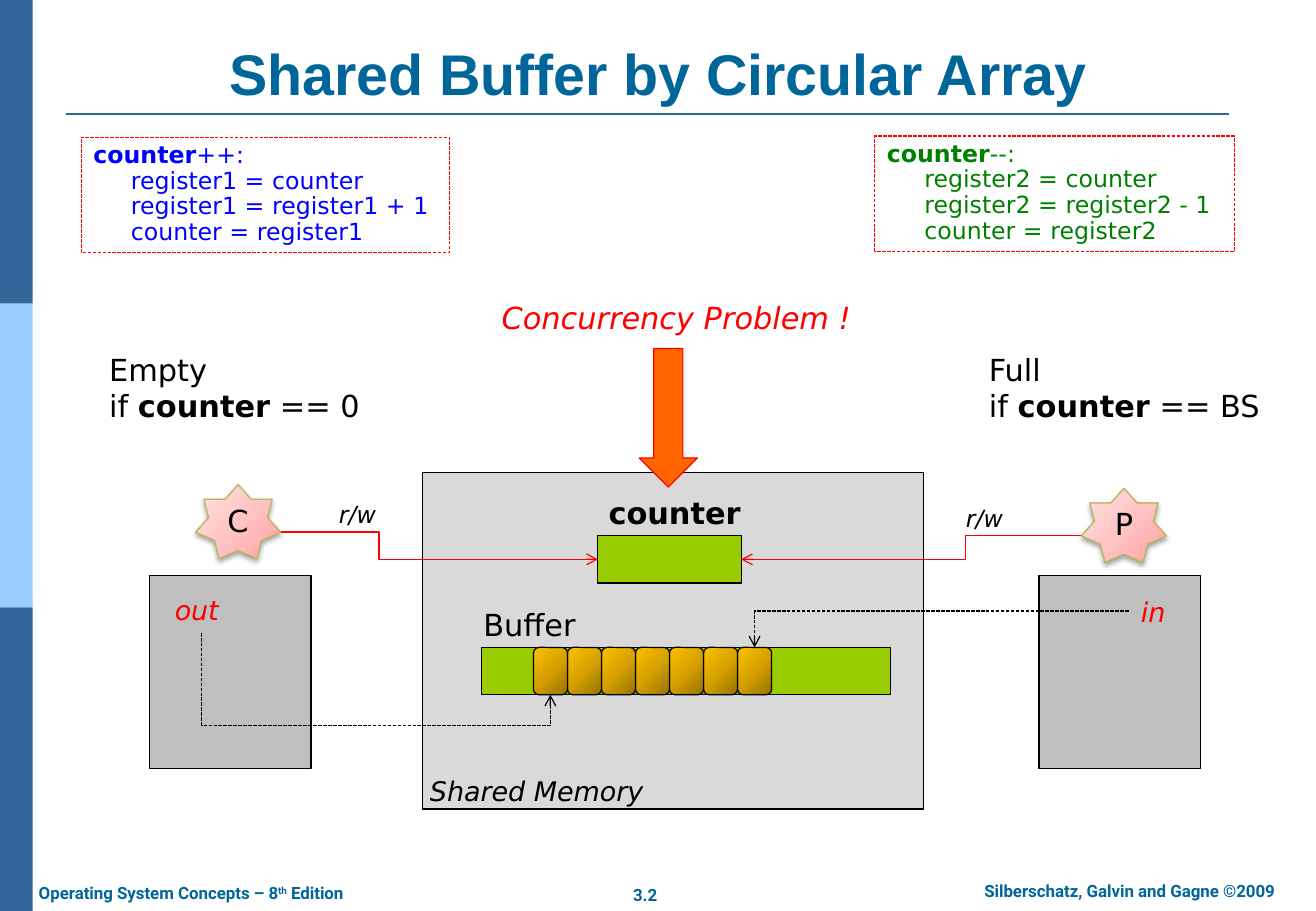
"""Build the slide on a shared buffer held in a circular array."""
from dataclasses import dataclass
from typing import Optional

from pptx import Presentation, oxml, util as u
from pptx.dml.color import RGBColor
from pptx.enum import dml, shapes, text
from pptx.oxml.ns import nsdecls, qn

S = shapes.MSO_SHAPE
A = text.PP_ALIGN


@dataclass(frozen=True)
class Theme:
    """Colours, fonts and type sizes."""
    title: str = "006699"
    navy: str = "336699"
    sky: str = "99CCFF"
    black: str = "000000"
    red: str = "FF0000"
    blue: str = "0000FF"
    green: str = "008000"
    lime: str = "99CC00"
    orange: str = "FF6600"
    memory: str = "D9D9D9"
    process: str = "BFBFBF"
    star_line: str = "B7B758"
    star: tuple = ("FFA0A0", "FFC5C5", "FFE3E3")
    slot: tuple = ("977200", "D7A200", "FFC000")
    body_font: str = "DejaVu Sans"
    title_font: str = "Arial"
    footer_font: str = "Roboto"
    title_size: int = 34
    large: int = 18
    medium: int = 16
    small: int = 14
    footer: int = 10


T = Theme()


@dataclass(frozen=True)
class Run:
    """A piece of text with its emphasis."""
    words: str
    bold: bool = False
    italic: bool = False
    raised: bool = False


@dataclass(frozen=True)
class Label:
    """A text box: place, paragraphs of runs, and format."""
    at: tuple
    paragraphs: tuple
    size: int = T.large
    color: str = T.black
    font: str = T.body_font
    align: A = A.LEFT
    wrap: bool = False
    spacing: float = 1.0
    border: Optional[str] = None


@dataclass(frozen=True)
class Block:
    """A preset shape: place, kind, fill and outline."""
    at: tuple
    fill: object
    line: Optional[str] = T.black
    kind: S = S.RECTANGLE


@dataclass(frozen=True)
class Elbow:
    """An elbow arrow: ends, bend and line."""
    begin: tuple
    end: tuple
    bend: Optional[float]
    color: str = T.black
    dashed: bool = True
    upright: bool = False
    side: Optional[int] = None


def write(p, runs: tuple, size: int, color: str, font: str) -> None:
    """Add formatted runs to a paragraph."""
    for run in runs:
        r = p.add_run()
        r.text = run.words
        r.font.size, r.font.name = u.Pt(size), font
        r.font.bold, r.font.italic = run.bold, run.italic
        r.font.color.rgb = RGBColor.from_string(color)
        if run.raised:
            r._r.get_or_add_rPr().set("baseline", "30000")


def outline(line, color: str, width: float = 0.75, dashed: bool = False) -> None:
    """Format a line."""
    line.color.rgb = RGBColor.from_string(color)
    line.width = u.Pt(width)
    if dashed:
        line.dash_style = dml.MSO_LINE.SQUARE_DOT


def draw_label(s, label: Label) -> None:
    """Draw a text box."""
    sp = s.shapes.add_textbox(*map(u.Inches, label.at))
    tf = sp.text_frame
    tf.word_wrap = label.wrap
    tf.auto_size = text.MSO_AUTO_SIZE.SHAPE_TO_FIT_TEXT
    if label.border:
        outline(sp.line, label.border, dashed=True)
    for i, runs in enumerate(label.paragraphs):
        p = tf.add_paragraph() if i else tf.paragraphs[0]
        p.alignment, p.line_spacing = label.align, label.spacing
        write(p, runs, label.size, label.color, label.font)


def draw_block(s, block: Block):
    """Draw a preset shape with a plain or gradient fill."""
    sp = s.shapes.add_shape(block.kind, *map(u.Inches, block.at))
    sp.shadow.inherit = False
    if isinstance(block.fill, tuple):
        sp.fill.background()
        stops = "".join(f'<a:gs pos="{i * 50000}"><a:srgbClr val="{c}"/></a:gs>'
                        for i, c in enumerate(block.fill))
        old = sp._element.spPr.find(qn("a:noFill"))
        old.getparent().replace(old, oxml.parse_xml(
            f'<a:gradFill {nsdecls("a")}><a:gsLst>{stops}</a:gsLst>'
            '<a:lin ang="13500000" scaled="0"/></a:gradFill>'))
    else:
        sp.fill.solid()
        sp.fill.fore_color.rgb = RGBColor.from_string(block.fill)
    if block.line:
        outline(sp.line, block.line)
    else:
        sp.line.fill.background()
    return sp


def draw_star(s, letter: str, left: float, top: float) -> None:
    """Draw a lettered star with a soft shadow."""
    sp = draw_block(s, Block((left, top, 0.7, 0.61), T.star, T.star_line, S.STAR_7_POINT))
    sp._element.spPr.find(qn("a:effectLst")).append(oxml.parse_xml(
        f'<a:outerShdw {nsdecls("a")} blurRad="{u.Pt(3.1)}" dist="{u.Pt(1.8)}" dir="5400000">'
        '<a:srgbClr val="000000"><a:alpha val="35000"/></a:srgbClr></a:outerShdw>'))
    tf = sp.text_frame
    tf.word_wrap = False
    tf.margin_left = tf.margin_right = u.Inches(0.07)
    tf.margin_top = tf.margin_bottom = u.Inches(0.04)
    tf.paragraphs[0].alignment = A.CENTER
    write(tf.paragraphs[0], (Run(letter),), T.large, T.black, T.body_font)


def draw_line(s, kind, begin: tuple, end: tuple):
    """Add a connector without a shadow."""
    sp = s.shapes.add_connector(kind, *map(u.Inches, begin + end))
    sp._element.spPr.append(oxml.parse_xml(f'<a:effectLst {nsdecls("a")}/>'))
    return sp


def draw_elbow(s, elbow: Elbow, target) -> None:
    """Draw an elbow arrow, turned a quarter when it sets out upright."""
    begin, end = elbow.begin, elbow.end
    if elbow.upright:
        cx, cy = (begin[0] + end[0]) / 2, (begin[1] + end[1]) / 2
        begin, end = ((cx - y + cy, cy + x - cx) for x, y in (begin, end))
    sp = draw_line(s, shapes.MSO_CONNECTOR.ELBOW, begin, end)
    spPr = sp._element.spPr
    if elbow.upright:
        spPr.find(qn("a:xfrm")).set("rot", "16200000")
    geom = spPr.find(qn("a:prstGeom"))
    if elbow.bend is None:
        geom.set("prst", "bentConnector2")
    else:
        geom.find(qn("a:avLst")).append(oxml.parse_xml(
            f'<a:gd {nsdecls("a")} name="adj1" fmla="val {round(elbow.bend * 100000)}"/>'))
    if elbow.side is not None:
        sp.end_connect(target, elbow.side)
    outline(sp.line, elbow.color, dashed=elbow.dashed)
    spPr.find(qn("a:ln")).append(oxml.parse_xml(f'<a:tailEnd {nsdecls("a")} type="arrow"/>'))


def code(at: tuple, sign: str, step: str, reg: str, color: str) -> Label:
    """Describe the register steps behind a counter change."""
    steps = (f"{reg} = counter", f"{reg} = {reg} {step}", f"counter = {reg}")
    lines = tuple((Run("     " + line),) for line in steps)
    return Label(at, ((Run("counter", bold=True), Run(sign + ":")),) + lines,
                 T.small, color, wrap=True, spacing=0.9, border=T.red)


def condition(left: float, width: float, state: str, value: str) -> Label:
    """Describe the test for a buffer state."""
    return Label((left, 2.84, width, 0.71), ((Run(state),), (
        Run("if "), Run("counter", bold=True), Run(f" == {value}"))))


def italic(at: tuple, words: str, size: int, color: str = T.black) -> Label:
    """Describe a one-line italic label."""
    return Label(at, ((Run(words, italic=True),),), size, color)


def footer(at: tuple, *runs: Run, align: A = A.CENTER, wrap: bool = False) -> Label:
    """Describe a footer text."""
    return Label(at, (runs,), T.footer, T.title, T.footer_font, align, wrap)


def main() -> None:
    """Build and save the slide."""
    prs = Presentation()
    prs.slide_width, prs.slide_height = u.Inches(10.83), u.Inches(7.5)
    s = prs.slides.add_slide(prs.slide_layouts[5])
    title = s.shapes.title
    title.left, title.top, title.width, title.height = map(u.Inches, (0.54, 0.3, 9.75, 0.63))
    tf = title.text_frame
    tf.vertical_anchor, tf.auto_size = text.MSO_ANCHOR.BOTTOM, text.MSO_AUTO_SIZE.NONE
    tf.paragraphs[0].alignment = A.CENTER
    write(tf.paragraphs[0], (Run("Shared Buffer by Circular Array", bold=True),),
          T.title_size, T.title, T.title_font)
    outline(draw_line(s, shapes.MSO_CONNECTOR.STRAIGHT, (0.54, 0.94), (10.11, 0.94)).line,
            T.navy, 1.5)

    bands = [Block((0, 2.5 * i, 0.27, 2.5), c, None)
             for i, c in enumerate((T.navy, T.sky, T.navy))]
    slots = [Block((4.39 + 0.28 * i, 5.33, 0.28, 0.39), T.slot, kind=S.ROUNDED_RECTANGLE)
             for i in reversed(range(7))]
    processes = [Block((left, 4.74, 1.33, 1.59), T.process) for left in (1.23, 8.55)]
    for block in (*bands, Block((3.48, 3.89, 4.12, 2.77), T.memory),
                  Block((3.96, 5.33, 3.37, 0.39), T.lime), *slots, *processes,
                  Block((5.26, 2.87, 0.48, 1.14), T.orange, T.red, S.DOWN_ARROW)):
        draw_block(s, block)
    counter = draw_block(s, Block((4.92, 4.41, 1.18, 0.39), T.lime))
    draw_star(s, "C", 1.61, 3.99)
    draw_star(s, "P", 8.9, 4.02)

    for elbow in (Elbow((1.66, 5.21), (4.53, 5.72), 1.495, upright=True),
                  Elbow((9.29, 5.03), (6.21, 5.33), None),
                  Elbow((2.31, 4.38), (4.92, 4.6), 0.31, T.red, False, side=1),
                  Elbow((8.9, 4.41), (6.1, 4.6), 0.34, T.red, False, side=3)):
        draw_elbow(s, elbow, counter)

    for label in (
            footer((5.06, 7.23, 0.5, 0.28), Run("3.2", True)),
            footer((7.69, 7.2, 3.21, 0.28),
                   Run("Silberschatz, Galvin and Gagne ©2009", True), wrap=True),
            footer((0.22, 7.22, 2.91, 0.28), Run("Operating System Concepts – 8", True),
                   Run("th", True, raised=True), Run(" Edition", True), align=A.LEFT),
            Label((3.88, 4.94, 0.97, 0.4), ((Run("Buffer"),),)),
            Label((4.91, 4.02, 1.3, 0.4), ((Run("counter", bold=True),),)),
            italic((1.34, 4.84, 0.63, 0.37), "out", T.medium, T.red),
            italic((9.29, 4.85, 0.47, 0.37), "in", T.medium, T.red),
            italic((3.44, 6.33, 2.05, 0.37), "Shared Memory", T.medium),
            italic((7.85, 4.1, 0.59, 0.34), "r/w", T.small),
            italic((2.69, 4.07, 0.59, 0.34), "r/w", T.small),
            italic((4.03, 2.41, 3.17, 0.4), "Concurrency Problem !", T.large, T.red),
            condition(0.8, 2.29, "Empty", "0"),
            condition(8.04, 2.47, "Full", "BS"),
            code((0.67, 1.13, 3.03, 0.95), "++", "+ 1", "register1", T.blue),
            code((7.2, 1.12, 2.96, 0.95), "--", "- 1", "register2", T.green)):
        draw_label(s, label)
    prs.save("out.pptx")


if __name__ == "__main__":
    main()
